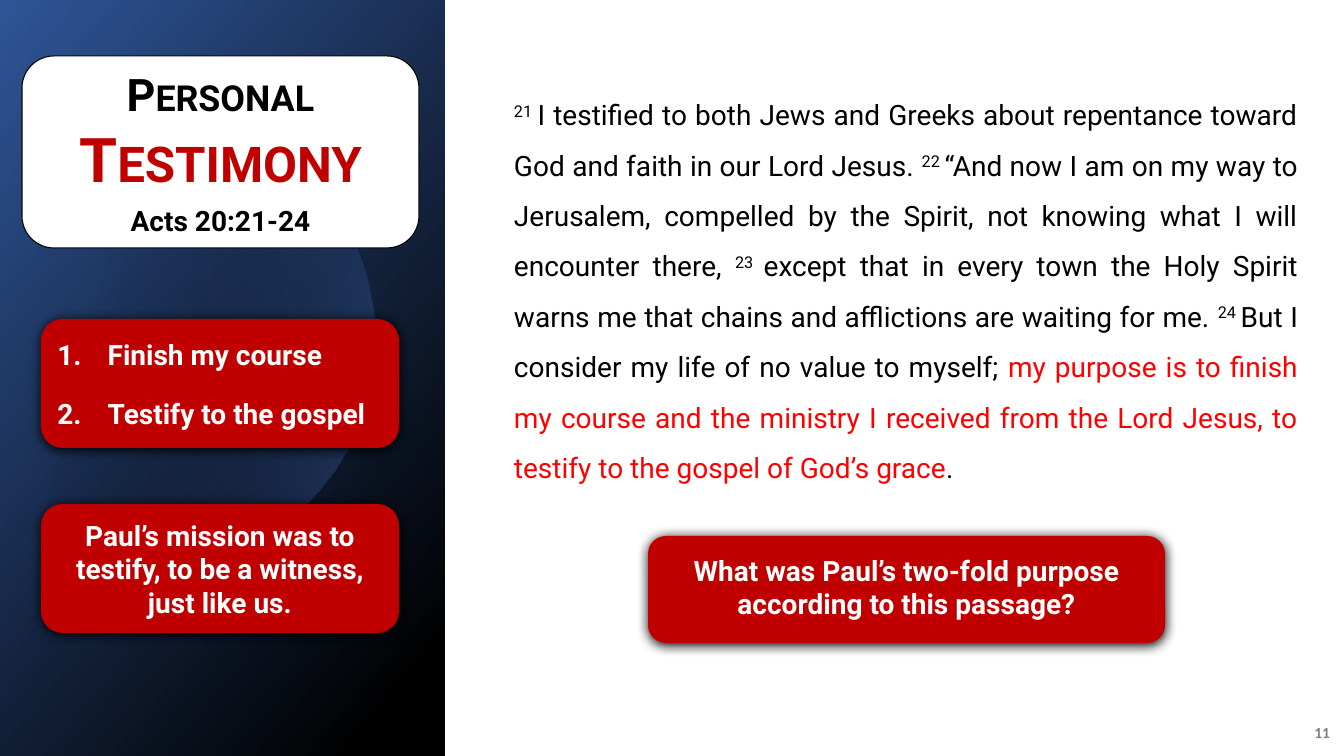
from math import acos, cos, pi, sin

from lxml.etree import SubElement
from pptx import Presentation
from pptx.dml.color import RGBColor
from pptx.enum.shapes import MSO_SHAPE as Shape
from pptx.enum.text import MSO_ANCHOR as Anchor, PP_ALIGN as Align
from pptx.oxml.ns import qn
from pptx.util import Emu, Pt

PX = 9071  # EMU per px, at 100.8 px to the inch

BLACK = RGBColor(0x00, 0x00, 0x00)
WHITE = RGBColor(0xFF, 0xFF, 0xFF)
GRAY = RGBColor(0x80, 0x80, 0x80)
RED = RGBColor(0xFF, 0x00, 0x00)
DARK_RED = RGBColor(0xC0, 0x00, 0x00)
NAVY = RGBColor(0x2F, 0x55, 0x97)
BLUE = RGBColor(0x44, 0x72, 0xC4)

# Verse number, then (text, colour) pieces
PASSAGE = [
    ("21", [("I testified to both Jews and Greeks about repentance toward God "
             "and faith in our Lord Jesus. ", BLACK)]),
    ("22", [("“And now I am on my way to Jerusalem, compelled by the Spirit, "
             "not knowing what I will encounter there, ", BLACK)]),
    ("23", [("except that in every town the Holy Spirit warns me that chains "
             "and afflictions are waiting for me. ", BLACK)]),
    ("24", [("But I consider my life of no value to myself; ", BLACK),
            ("my purpose is to finish my course and the ministry I received "
             "from the Lord Jesus, to testify to the gospel of God’s grace", RED),
            (".", BLACK)]),
]


def px(*lengths):
    return [Emu(length * PX) for length in lengths]


def set_font(font, size, color, bold=True, name="Roboto"):
    font.name, font.size, font.bold = name, Pt(size), bold
    font.color.rgb = color


def set_frame(shape, anchor, insets):
    frame = shape.text_frame
    frame.word_wrap = True
    frame.vertical_anchor = anchor
    (frame.margin_left, frame.margin_top,
     frame.margin_right, frame.margin_bottom) = px(*insets)
    return frame


def fill_gradient(shape, angle, stops):
    """Each stop is (position, colour, opacity in percent)."""
    shape.shadow.inherit = False
    shape.line.fill.background()
    shape.fill.gradient()
    shape.fill.gradient_angle = 360 - angle
    elements = shape.fill._fill._gradFill.gsLst
    for stop, element, (position, color, opacity) in zip(
            shape.fill.gradient_stops, elements, stops):
        stop.position = position
        stop.color.rgb = color
        if opacity < 100:
            SubElement(element[0], qn("a:alpha"), val=str(opacity * 1000))


def add_side_panel(slide):
    panel = slide.shapes.add_shape(Shape.RECTANGLE, *px(0, 0, 445, 756))
    fill_gradient(panel, 40, [(0, NAVY, 100), (0.92, BLACK, 100)])


def add_cut_circle(slide, center_x, center_y, radius):
    """Circle cut off by the left edge of the slide."""
    limit = pi - acos(center_x / radius)
    steps = 90
    angles = [limit * (2 * step / steps - 1) for step in range(steps + 1)]
    points = [(round(center_x + radius * cos(angle)),
               round(center_y + radius * sin(angle))) for angle in angles]
    builder = slide.shapes.build_freeform(*points[0], scale=PX)
    builder.add_line_segments(points[1:], close=True)
    fill_gradient(builder.convert_to_shape(), 14,
                  [(0.29, BLACK, 0), (1, BLUE, 43)])


def add_card(slide, box, fill, insets):
    card = slide.shapes.add_shape(Shape.ROUNDED_RECTANGLE, *px(*box))
    card.shadow.inherit = False
    card.fill.solid()
    card.fill.fore_color.rgb = fill
    return card, set_frame(card, Anchor.MIDDLE, insets)


def add_title_card(slide):
    card, frame = add_card(slide, (22, 56, 397, 192), WHITE, (0, 0, 0, 0))
    card.line.color.rgb = BLACK
    card.line.width = Pt(0.75)
    title, reference = frame.paragraphs[0], frame.add_paragraph()
    for text, size, color in [("Personal", 32, BLACK), ("Testimony", 44, DARK_RED)]:
        if title.runs:
            title.add_line_break()
        run = title.add_run()
        run.text = text
        set_font(run.font, size, color)
        run.font._element.set("cap", "small")
    reference.text = "Acts 20:21-24"
    set_font(reference.font, 20, BLACK)
    for paragraph in (title, reference):
        paragraph.alignment = Align.CENTER
        paragraph.space_after = Pt(6)


def add_red_card(slide, box, lines, insets=(10, 10, 10, 10), space_after=18,
                 numbered=False):
    card, frame = add_card(slide, box, DARK_RED, insets)
    card.line.fill.background()
    # Soft shadow just below the card
    effects = card._element.spPr.find(qn("a:effectLst"))
    shadow = SubElement(effects, qn("a:outerShdw"), blurRad=str(Pt(8.5)),
                        dist=str(Pt(1)), dir="5400000", algn="t", rotWithShape="0")
    SubElement(shadow, qn("a:srgbClr"), val=str(BLACK))
    for index, line in enumerate(lines):
        paragraph = frame.add_paragraph() if index else frame.paragraphs[0]
        paragraph.text = line
        paragraph.alignment = Align.LEFT if numbered else Align.CENTER
        paragraph.space_after = Pt(space_after)
        if numbered:
            properties = paragraph._p.get_or_add_pPr()
            properties.set("marL", str(Pt(36)))
            properties.set("indent", str(-Pt(36)))
            SubElement(properties, qn("a:buFont"), typeface="+mj-lt")
            SubElement(properties, qn("a:buAutoNum"), type="arabicPeriod")
        set_font(paragraph.font, 20, WHITE)


def add_passage(slide):
    box = slide.shapes.add_textbox(*px(504, 76, 804, 411))
    paragraph = set_frame(box, Anchor.TOP, (10, 5, 10, 5)).paragraphs[0]
    paragraph.alignment = Align.JUSTIFY
    paragraph.line_spacing = 1.5
    for number, pieces in PASSAGE:
        for text, color in [(number + " ", BLACK)] + pieces:
            run = paragraph.add_run()
            run.text = text
            set_font(run.font, 20, color, bold=False)
            if text.startswith(number):
                run.font._element.set("baseline", "30000")


def add_page_number(slide):
    box = slide.shapes.add_textbox(*px(1290, 712, 50, 40))
    paragraph = set_frame(box, Anchor.MIDDLE, (10, 5, 10, 5)).paragraphs[0]
    paragraph.text = "11"
    paragraph.alignment = Align.RIGHT
    paragraph.space_after = Pt(6)
    set_font(paragraph.font, 11, GRAY, name="Calibri")


def main():
    presentation = Presentation()
    presentation.slide_width, presentation.slide_height = px(1344, 756)
    slide = presentation.slides.add_slide(presentation.slide_layouts[6])

    # Left side
    add_side_panel(slide)
    add_cut_circle(slide, 146, 340, 229)
    add_title_card(slide)
    add_red_card(slide, (41, 319, 358, 129),
                 ["Finish my course", "Testify to the gospel"], numbered=True)
    add_red_card(slide, (41, 504, 358, 129),
                 ["Paul’s mission was to testify, to be a witness, just like us."])

    # Right side
    add_passage(slide)
    add_red_card(slide, (648, 536, 517, 107),
                 ["What was Paul’s two-fold purpose according to this passage?"],
                 insets=(10, 0, 10, 5), space_after=0)
    add_page_number(slide)

    presentation.save("out.pptx")


if __name__ == "__main__":
    main()
